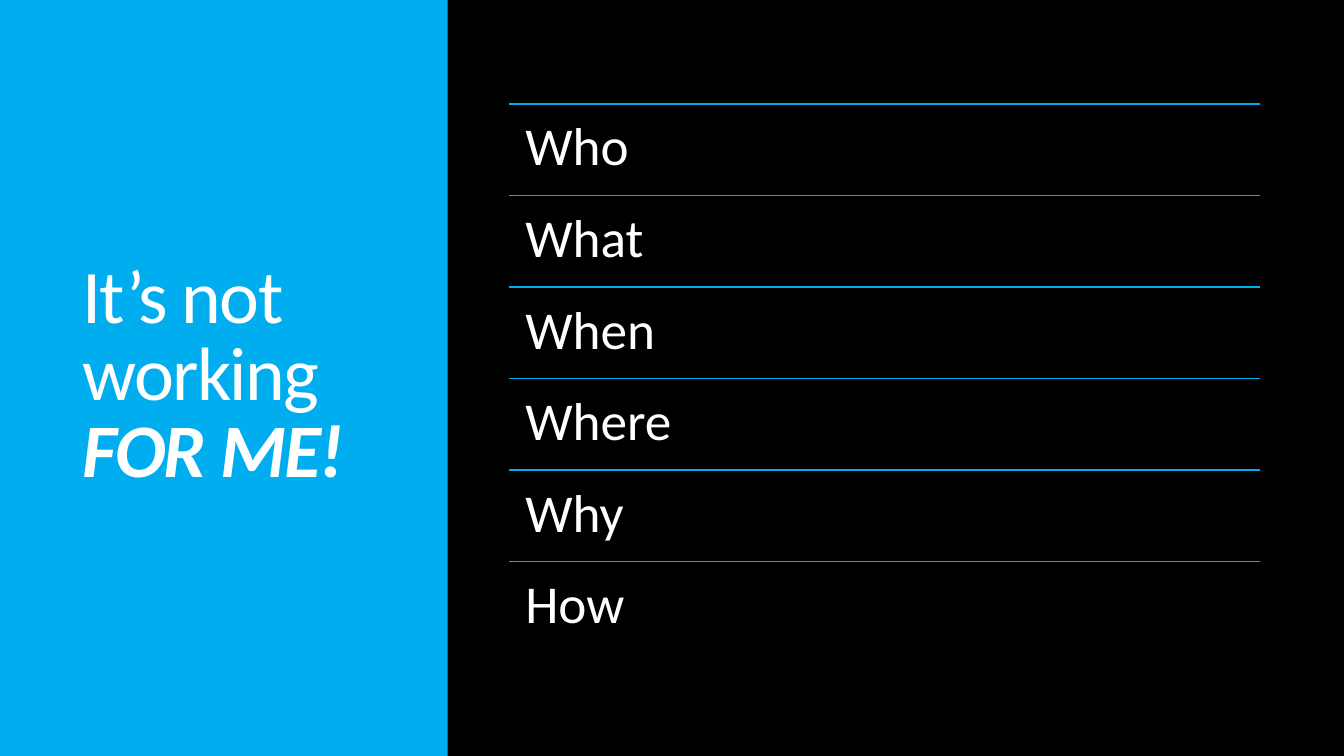
from dataclasses import dataclass

from lxml import etree
from pptx import Presentation
from pptx.dml.color import RGBColor
from pptx.enum import shapes, text
from pptx.oxml import ns
from pptx.util import Inches, Pt


@dataclass(frozen=True)
class Theme:
    background: RGBColor = RGBColor(0x00, 0x00, 0x00)
    accent: RGBColor = RGBColor(0x00, 0xAE, 0xEF)
    ink: RGBColor = RGBColor(0xFF, 0xFF, 0xFF)
    font: str = "Calibri"
    title_size: float = 54
    item_size: float = 38
    rule_width: float = 1


THEME = Theme()
QUESTIONS = ["Who", "What", "When", "Where", "Why", "How"]


def add_span(para, content, *, size, bold=False, italic=False, tracking=0):
    span = para.add_run()
    span.text = content
    span.font.name = THEME.font
    span.font.size = Pt(size)
    span.font.color.rgb = THEME.ink
    span.font.bold = bold
    span.font.italic = italic
    if tracking:
        span.font._element.set("spc", str(round(tracking * 100)))


def add_text_box(page, left, top, width, height, *, line_spacing,
                 inset=(0.1, 0.05), anchor=text.MSO_ANCHOR.TOP):
    box = page.shapes.add_textbox(Inches(left), Inches(top), Inches(width), Inches(height))
    frame = box.text_frame
    frame.word_wrap = True
    frame.vertical_anchor = anchor
    frame.margin_left = frame.margin_right = Inches(inset[0])
    frame.margin_top = frame.margin_bottom = Inches(inset[1])
    para = frame.paragraphs[0]
    para.line_spacing = line_spacing
    return para


def add_rule(page, left, top, width):
    rule = page.shapes.add_connector(
        shapes.MSO_CONNECTOR.STRAIGHT,
        Inches(left), Inches(top), Inches(left + width), Inches(top))
    rule.line.color.rgb = THEME.accent
    rule.line.width = Pt(THEME.rule_width)
    etree.SubElement(rule._element.spPr, ns.qn("a:effectLst"))


def add_title_panel(page, left, top, width, height):
    panel = page.shapes.add_shape(
        shapes.MSO_SHAPE.RECTANGLE,
        Inches(left), Inches(top), Inches(width), Inches(height))
    panel.shadow.inherit = False
    panel.fill.solid()
    panel.fill.fore_color.rgb = THEME.accent
    panel.line.fill.background()

    para = add_text_box(page, left + 0.72, top + 1.02, width - 1.17, height - 2.05,
                        line_spacing=0.85, anchor=text.MSO_ANCHOR.MIDDLE)
    add_span(para, "It’s not working", size=THEME.title_size, tracking=-1.2)
    para.add_line_break()
    add_span(para, "FOR ME!", size=THEME.title_size, bold=True, italic=True, tracking=-1.2)


def add_question_list(page, left, top, width, height, questions):
    pitch = height / len(questions)
    for index, question in enumerate(questions):
        row_top = top + index * pitch
        add_rule(page, left, row_top, width)
        para = add_text_box(page, left, row_top, width, pitch,
                            line_spacing=0.9, inset=(0.16, 0.16))
        add_span(para, question, size=THEME.item_size)


def main():
    deck = Presentation()
    deck.slide_width = Inches(13.33)
    deck.slide_height = Inches(7.5)
    page = deck.slides.add_slide(deck.slide_layouts[6])
    page.background.fill.solid()
    page.background.fill.fore_color.rgb = THEME.background
    add_title_panel(page, 0, 0, 4.44, 7.5)
    add_question_list(page, 5.05, 1.03, 7.45, 5.45, QUESTIONS)
    deck.save("out.pptx")


if __name__ == "__main__":
    main()
